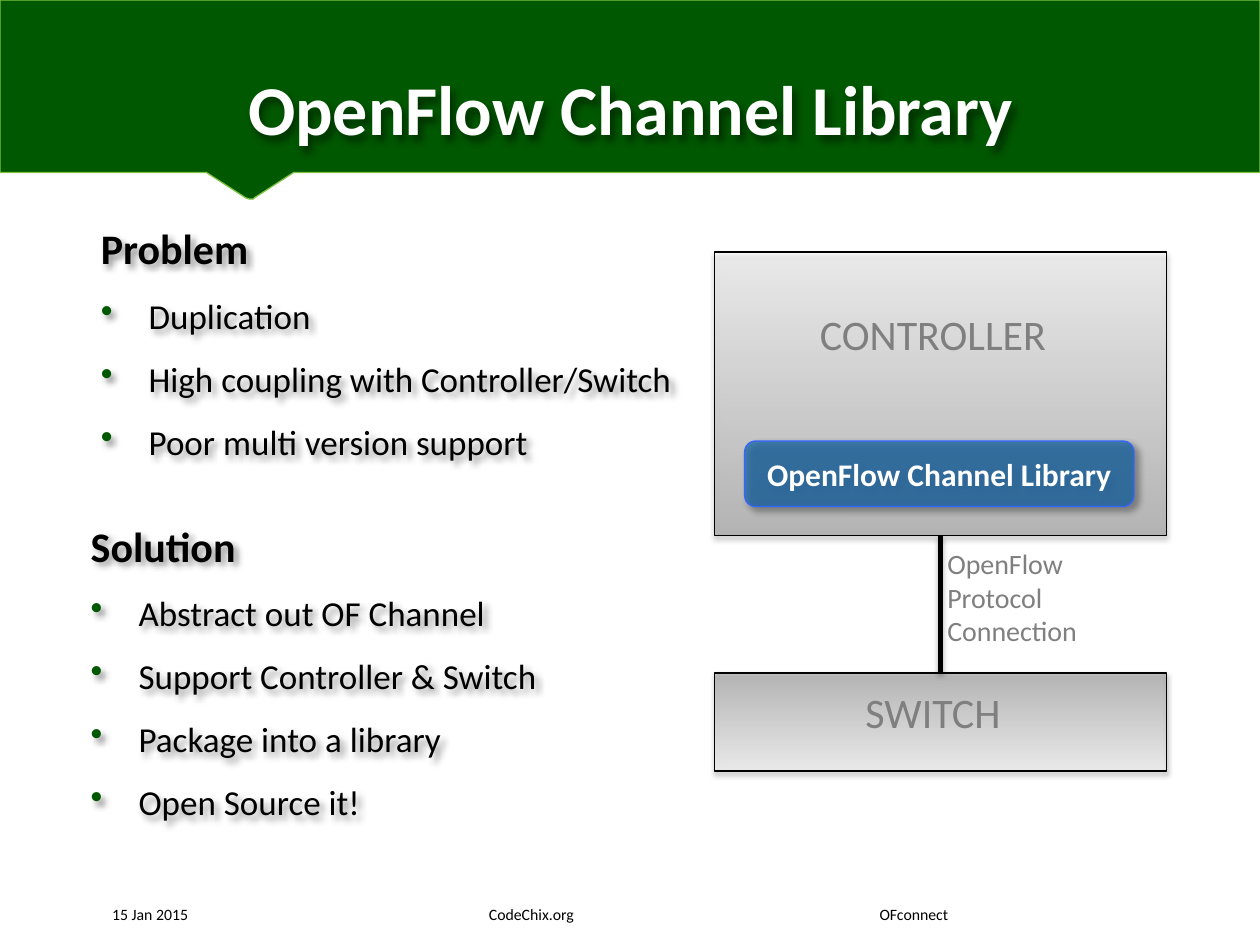
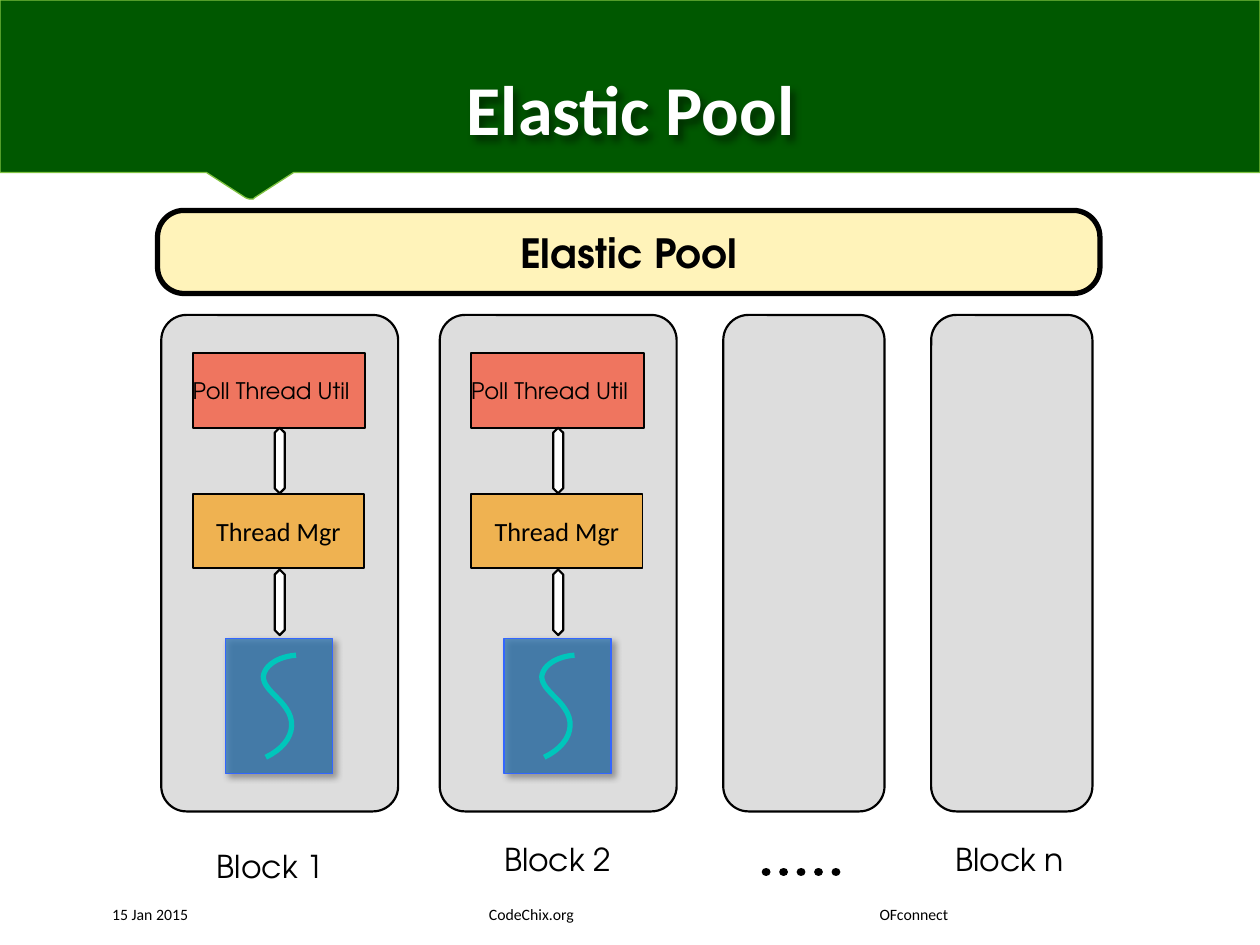
from dataclasses import dataclass

from lxml.etree import SubElement
from pptx import Presentation
from pptx.dml.color import RGBColor
from pptx.enum.dml import MSO_LINE
from pptx.enum.shapes import MSO_CONNECTOR, MSO_SHAPE
from pptx.enum.text import MSO_ANCHOR, PP_ALIGN
from pptx.oxml.ns import qn
from pptx.util import Inches, Pt

SLIDE_W, SLIDE_H = Inches(10), Inches(7.5)
COL, ROW = SLIDE_W / 100, SLIDE_H / 75


@dataclass(frozen=True)
class Theme:
    body_font: str = "Calibri"
    pool_font: str = "TeX Gyre Adventor"
    green: str = "005800"
    band_edge: str = "80C342"
    white: str = "FFFFFF"
    black: str = "000000"
    grey: str = "7F7F7F"
    library: str = "1765A5"
    thread_box: str = "2971AE"
    blue_edge: str = "3366FF"
    block: str = "DDDDDD"
    manager: str = "EFB251"
    poll: str = "EF755F"
    pool: str = "FFF3BA"
    thread: str = "00C6BB"
    title_size: float = 40
    heading_size: float = 24
    pool_size: float = 23
    bullet_size: float = 20
    label_size: float = 18
    link_size: float = 16
    manager_size: float = 15
    poll_size: float = 13
    footer_size: float = 9
    # Shadows: opacity %, blur pt, distance pt, direction in degrees
    soft_shadow: tuple = (35, 3.1, 1.8, 90)
    raised_shadow: tuple = (43, 4, 3, 45)


THEME = Theme()


@dataclass(frozen=True)
class Box:
    """An area in grid columns and rows."""
    x: float
    y: float
    w: float
    h: float

    def inner(self, x, y, w, h):
        return Box(self.x + x, self.y + y, w, h)

    def point(self, x, y):
        return round((self.x + x) * COL), round((self.y + y) * ROW)

    def emu(self):
        return (*self.point(0, 0), round(self.w * COL), round(self.h * ROW))


def rgb(value):
    return RGBColor.from_string(value)


def set_shadow(item, shadow=None):
    effects = item._element.spPr.get_or_add_effectLst()
    if shadow:
        opacity, blur, distance, direction = shadow
        outer = SubElement(effects, qn("a:outerShdw"), blurRad=str(Pt(blur)),
                           dist=str(Pt(distance)), dir=str(direction * 60000),
                           algn="ctr", rotWithShape="0")
        colour = SubElement(outer, qn("a:srgbClr"), val=THEME.black)
        SubElement(colour, qn("a:alpha"), val=str(opacity * 1000))


def set_opacity(shape, percent):
    """Make the fill translucent; call before the line is coloured."""
    for colour in shape._element.spPr.iter(qn("a:srgbClr")):
        SubElement(colour, qn("a:alpha"), val=str(percent * 1000))


def set_line(item, colour, width):
    item.line.color.rgb = rgb(colour)
    item.line.width = Pt(width)


def style_font(paragraph, size, colour=THEME.black, bold=False, font=THEME.body_font):
    paragraph.font.name = font
    paragraph.font.size = Pt(size)
    paragraph.font.bold = bold
    paragraph.font.color.rgb = rgb(colour)


def set_frame(shape, anchor, inset):
    frame = shape.text_frame
    frame.word_wrap = True
    frame.vertical_anchor = anchor
    if inset is not None:
        frame.margin_left = frame.margin_right = Inches(inset)
        frame.margin_top = frame.margin_bottom = Inches(inset)
    return frame


def write(shape, text, size, align=PP_ALIGN.CENTER, anchor=MSO_ANCHOR.MIDDLE,
          inset=None, **font):
    paragraph = set_frame(shape, anchor, inset).paragraphs[0]
    paragraph.text = text
    paragraph.alignment = align
    style_font(paragraph, size, **font)


def add_label(slide, box, text, size, **options):
    label = slide.shapes.add_textbox(*box.emu())
    write(label, text, size, **{"anchor": MSO_ANCHOR.TOP, **options})
    return label


def add_panel(slide, box, fill, edge=THEME.black, width=1, kind=MSO_SHAPE.RECTANGLE,
              adjust=(), opacity=None, shadow=None):
    panel = slide.shapes.add_shape(kind, *box.emu())
    for index, value in enumerate(adjust):
        panel.adjustments[index] = value
    panel.fill.solid()
    panel.fill.fore_color.rgb = rgb(fill)
    if opacity:
        set_opacity(panel, opacity)
    set_line(panel, edge, width)
    set_shadow(panel, shadow)
    return panel


def add_outline(slide, box, points, close):
    start, *rest = [box.point(*point) for point in points]
    builder = slide.shapes.build_freeform(*start)
    builder.add_line_segments(rest, close=close)
    outline = builder.convert_to_shape()
    set_shadow(outline)
    return outline


def add_band(slide, box, title):
    notch = [(16.4, 13.7), (19.5, 15.7), (19.8, 15.8), (20, 15.8), (20.1, 15.8),
             (20.2, 15.7), (23.3, 13.7)]
    band = add_outline(slide, box, [(box.w, 0), (0, 0), (0, 13.7), *notch,
                                    (box.w, 13.7)], close=True)
    band.fill.solid()
    band.fill.fore_color.rgb = rgb(THEME.green)
    set_line(band, THEME.band_edge, 0.75)
    heading = add_label(slide, box.inner(8.9, 0, 82.3, 11.9), title, THEME.title_size,
                        anchor=MSO_ANCHOR.BOTTOM, inset=0, colour=THEME.white, bold=True)
    set_shadow(heading, THEME.raised_shadow)


def add_footer(slide, box):
    footer = slide.shapes.add_textbox(*box.emu())
    paragraph = set_frame(footer, MSO_ANCHOR.BOTTOM, 0).paragraphs[0]
    paragraph.text = "15 Jan 2015\tCodeChix.org\tOFconnect"
    tabs = SubElement(paragraph._p.get_or_add_pPr(), qn("a:tabLst"))
    for stop in (29.9, 60.9):
        SubElement(tabs, qn("a:tab"), pos=str(round(stop * COL)), algn="l")
    style_font(paragraph, THEME.footer_size)


def start_slide(deck, title):
    slide = deck.slides.add_slide(deck.slide_layouts[6])
    add_band(slide, Box(0, 0, 100, 15.8), title)
    add_footer(slide, Box(8.9, 70.8, 68.8, 2.5))
    return slide


def add_points(slide, box, heading, points):
    """Bold heading followed by its bulleted points."""
    area = slide.shapes.add_textbox(*box.emu())
    set_shadow(area, THEME.raised_shadow)
    frame = set_frame(area, MSO_ANCHOR.TOP, 0.05)
    frame.paragraphs[0].text = heading
    style_font(frame.paragraphs[0], THEME.heading_size, bold=True)
    for point in points:
        paragraph = frame.add_paragraph()
        paragraph.text = point
        paragraph.line_spacing = 1.5
        properties = paragraph._p.get_or_add_pPr()
        properties.set("marL", str(Inches(0.38)))
        properties.set("indent", str(-Inches(0.38)))
        bullet_colour = SubElement(properties, qn("a:buClr"))
        SubElement(bullet_colour, qn("a:srgbClr"), val=THEME.green)
        SubElement(properties, qn("a:buChar"), char="•")
        style_font(paragraph, THEME.bullet_size)


def add_device(slide, box, angle):
    device = slide.shapes.add_shape(MSO_SHAPE.RECTANGLE, *box.emu())
    device.fill.gradient()
    device.fill.gradient_angle = angle
    for stop, colour in zip(device.fill.gradient_stops, (THEME.grey, THEME.white)):
        stop.color.rgb = rgb(colour)
    set_opacity(device, 42)
    set_line(device, THEME.black, 0.75)
    set_shadow(device, THEME.soft_shadow)
    return device


def add_channel_diagram(slide, box):
    controller = add_device(slide, box.inner(0, 0, box.w, 22.5), 90)
    switch = add_device(slide, box.inner(0, 33.4, box.w, 7.8), 270)
    library = add_panel(slide, box.inner(2.4, 15, 30.9, 5.2), THEME.library,
                        THEME.blue_edge, 0.75, MSO_SHAPE.ROUNDED_RECTANGLE,
                        opacity=74, shadow=THEME.raised_shadow)
    write(library, "OpenFlow Channel Library", THEME.label_size,
          colour=THEME.white, bold=True)
    for top, name in ((4, "CONTROLLER"), (34, "SWITCH")):
        add_label(slide, box.inner(1.9, top, 30.9, 5), name, THEME.heading_size,
                  colour=THEME.grey)
    connection = slide.shapes.add_connector(MSO_CONNECTOR.STRAIGHT, 0, 0, 0, 0)
    connection.begin_connect(controller, 2)
    connection.end_connect(switch, 0)
    set_line(connection, THEME.black, 2.5)
    set_shadow(connection, THEME.soft_shadow)
    add_label(slide, box.inner(17.5, 22.9, 18.5, 10.1), "OpenFlow Protocol Connection",
              THEME.link_size, align=PP_ALIGN.LEFT, colour=THEME.grey)


def bezier(start, control_a, control_b, end, steps=12):
    """Points along a cubic curve, without its start."""
    for step in range(1, steps + 1):
        t = step / steps
        weights = ((1 - t) ** 3, 3 * t * (1 - t) ** 2, 3 * t * t * (1 - t), t ** 3)
        corners = (start, control_a, control_b, end)
        yield tuple(sum(w * c[axis] for w, c in zip(weights, corners))
                    for axis in (0, 1))


def add_thread(slide, box):
    add_panel(slide, box, THEME.thread_box, THEME.blue_edge, 0.75,
              opacity=74, shadow=THEME.raised_shadow)
    nodes = [(5.6, 1.3), (4.2, 1.4), (3.1, 2.1), (3, 3), (3, 3.9), (4.2, 4.6),
             (4.8, 5.5), (5.8, 6.9), (5.1, 8.5), (3.2, 9.4)]
    curve = nodes[:1]
    for first in range(0, len(nodes) - 1, 3):
        curve += bezier(*nodes[first:first + 4])
    thread = add_outline(slide, box, curve, close=False)
    thread.fill.background()
    set_line(thread, THEME.thread, 3)


def add_block(slide, box):
    add_panel(slide, box, THEME.block, width=1.25, kind=MSO_SHAPE.ROUNDED_RECTANGLE,
              adjust=(2 / box.w,))


def add_block_stages(slide, box):
    poll = add_panel(slide, box.inner(2.5, 3, 13.7, 6), THEME.poll)
    write(poll, "Poll Thread Util", THEME.poll_size, align=PP_ALIGN.LEFT, inset=0,
          font=THEME.pool_font)
    manager = add_panel(slide, box.inner(2.5, 14.2, 13.6, 5.9), THEME.manager)
    write(manager, "Thread Mgr", THEME.manager_size, inset=0)
    for top in (8.95, 20.2):
        add_panel(slide, box.inner(9, top, 0.8, 5.2), THEME.white, width=1.25,
                  kind=MSO_SHAPE.UP_DOWN_ARROW, adjust=(0.41, 1.5))
    add_thread(slide, box.inner(5.1, 25.7, 8.5, 10.7))


def add_pool(slide, box):
    pool = add_panel(slide, box.inner(0, 0, box.w, 6.6), THEME.pool, width=3,
                     kind=MSO_SHAPE.ROUNDED_RECTANGLE, adjust=(0.32,))
    write(pool, "Elastic Pool", THEME.pool_size, inset=0, bold=True,
          font=THEME.pool_font)
    for left, width, is_detailed in ((0.3, 18.8, True), (22.4, 18.8, True),
                                     (44.9, 12.8, False), (61.4, 12.8, False)):
        block = box.inner(left, 8.3, width, 39.4)
        add_block(slide, block)
        if is_detailed:
            add_block_stages(slide, block)
    for left, top, name in ((4.7, 50.5, "Block 1"), (27.5, 50, "Block 2"),
                            (63.3, 50, "Block n")):
        add_label(slide, box.inner(left, top, 9.8, 4.1), name, THEME.label_size,
                  align=PP_ALIGN.LEFT, inset=0, font=THEME.pool_font)
    ellipsis = slide.shapes.add_connector(MSO_CONNECTOR.STRAIGHT,
                                          *box.point(48.3, 52.5), *box.point(55.2, 52.5))
    set_line(ellipsis, THEME.black, 5)
    ellipsis.line.dash_style = MSO_LINE.ROUND_DOT
    ellipsis.line._get_or_add_ln().set("cap", "rnd")
    set_shadow(ellipsis)


def build_channel_slide(deck):
    slide = start_slide(deck, "OpenFlow Channel Library")
    add_channel_diagram(slide, Box(56.7, 20, 35.9, 41.2))
    add_points(slide, Box(7.5, 17.2, 48.6, 21.2), "Problem",
               ["Duplication", "High coupling with Controller/Switch",
                "Poor multi version support"])
    add_points(slide, Box(6.7, 40.8, 43.3, 25), "Solution",
               ["Abstract out OF Channel", "Support Controller & Switch",
                "Package into a library", "Open Source it!"])


def build_pool_slide(deck):
    add_pool(start_slide(deck, "Elastic Pool"), Box(12.5, 16.7, 74.8, 54.1))


def main():
    deck = Presentation()
    deck.slide_width, deck.slide_height = SLIDE_W, SLIDE_H
    build_channel_slide(deck)
    build_pool_slide(deck)
    deck.save("out.pptx")


if __name__ == "__main__":
    main()
